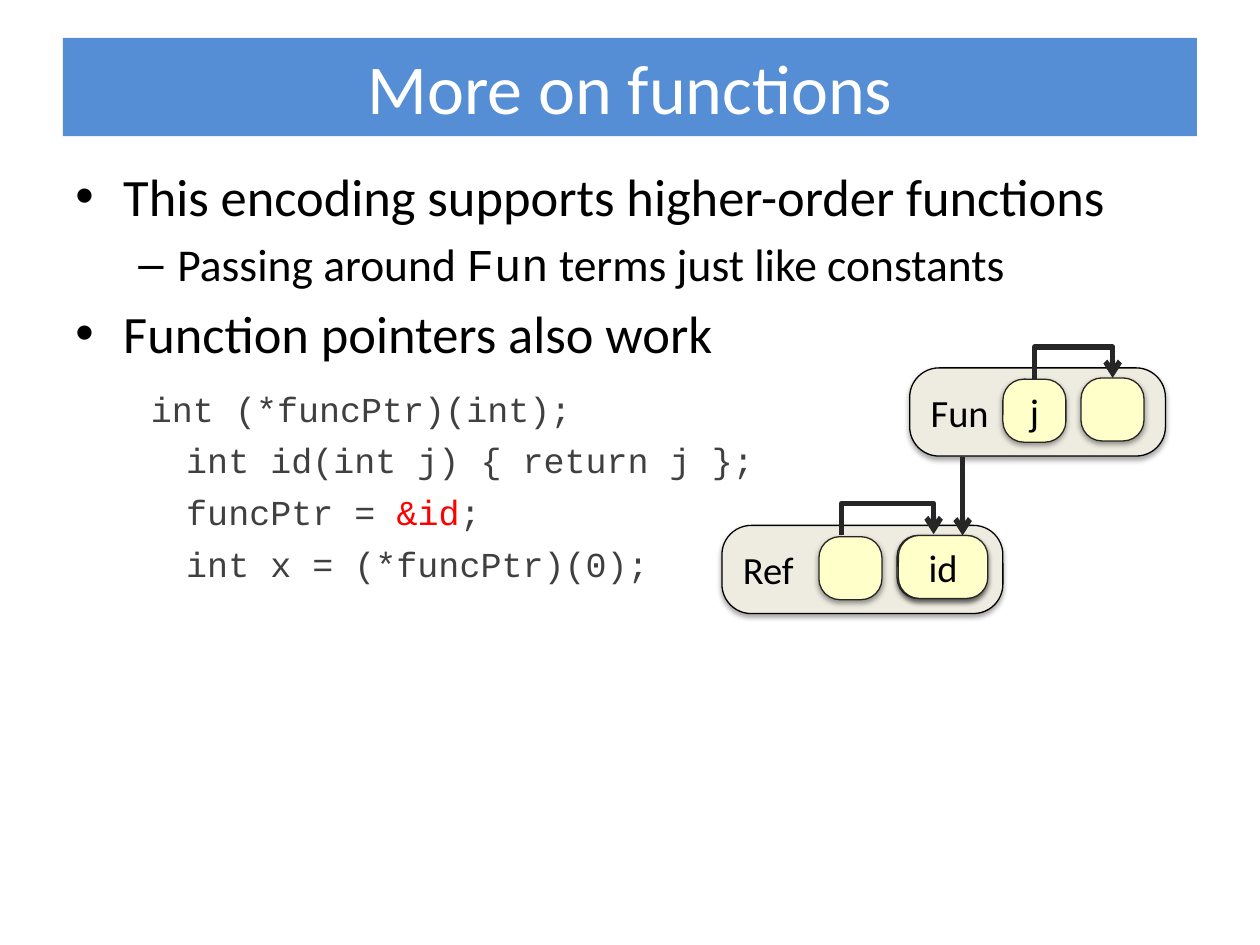
from lxml.etree import SubElement
from pptx import Presentation
from pptx.dml.color import RGBColor
from pptx.enum.shapes import MSO_CONNECTOR as Link, MSO_SHAPE as Preset
from pptx.enum.text import MSO_ANCHOR as Anchor, PP_ALIGN as Align
from pptx.oxml.ns import qn
from pptx.util import Emu, Inches, Pt

THEME = {
    "banner": "558ED5", "white": "FFFFFF", "black": "000000", "code": "404040",
    "alert": "FF0000", "term": "EEECE1", "slot": "FFFFCA", "stroke": "262626",
    "sans": "Calibri", "mono": "Courier New",
    "title": 40, "point": 30, "detail": 26, "listing": 20, "label": 22,
}
LEVELS = {
    "point": {"margin": 0.38, "hang": 0.38, "before": 6, "bullet": "•"},
    "detail": {"margin": 0.81, "hang": 0.31, "before": 5.4, "bullet": "–"},
    "declaration": {"margin": 0.6, "hang": 0, "before": 13, "bullet": None},
    "statement": {"margin": 0.88, "hang": 0, "before": 5.6, "bullet": None},
}
SANS = {
    "point": ("sans", "point", "black"),
    "detail": ("sans", "detail", "black"),
}
MONO_DETAIL = ("mono", "detail", "black")
CODE = ("mono", "listing", "code")
CODE_ALERT = ("mono", "listing", "alert")

TITLE = "More on functions"
BODY = [
    ("point", [("This encoding supports higher-order functions", SANS["point"])]),
    ("detail", [("Passing around ", SANS["detail"]), ("Fun", MONO_DETAIL),
                (" terms just like constants", SANS["detail"])]),
    ("point", [("Function pointers also work", SANS["point"])]),
    ("declaration", [("int (*funcPtr)(int);", CODE)]),
    ("statement", [("int id(int j) { return j };", CODE)]),
    ("statement", [("funcPtr = ", CODE), ("&id", CODE_ALERT), (";", CODE)]),
    ("statement", [("int x = (*funcPtr)(0);", CODE)]),
]
TERMS = [
    {"label": "Fun", "at": (7.22, 2.92), "width": 2.03, "loop": (8.21, 8.83, 3.0),
     "slots": [("j", 7.96, 3.01, 0.5), ("", 8.58, 3.0, 0.5)]},
    {"label": "Ref", "at": (5.73, 4.17), "width": 2.23, "loop": (6.68, 7.41, 4.24),
     "slots": [("", 6.5, 4.26, 0.5), ("id", 7.12, 4.25, 0.71)]},
]
TERM_HEIGHT, SLOT_HEIGHT = 0.7, 0.5
LOOP_DROP, LOOP_RISE = 0.01, 0.26
TERM_LOOK = {"fill": "term", "line": "black", "alpha": 35, "distance": 1.8}
SLOT_LOOK = {"fill": "slot", "line": "stroke", "alpha": 38, "distance": 1.6}
POINTER = ((7.64, 3.63), (7.64, 4.25))
FRONT_SLOT = ("id", 7.13, 4.25, 0.71)


def color(key):
    """Return a theme colour."""
    return RGBColor.from_string(THEME[key])


def write(paragraph, words, style):
    """Add a run in a (font, size, colour) style."""
    face, size, ink = style
    run = paragraph.add_run()
    run.text = words
    for name, value in {"name": THEME[face], "size": Pt(THEME[size])}.items():
        setattr(run.font, name, value)
    run.font.color.rgb = color(ink)


def add_block(slide, preset, box, fill, words, style, align):
    """Add a filled shape with vertically centred text."""
    block = slide.shapes.add_shape(preset, *map(Inches, box))
    block.shadow.inherit = False
    block.fill.solid()
    block.fill.fore_color.rgb = color(fill)
    block.line.fill.background()
    block.text_frame.vertical_anchor = Anchor.MIDDLE
    paragraph = block.text_frame.paragraphs[0]
    paragraph.alignment = align
    if words:
        write(paragraph, words, style)
    return block


def add_rounded(slide, box, words, look, align):
    """Add an outlined rounded box with a soft shadow."""
    block = add_block(slide, Preset.ROUNDED_RECTANGLE, box, look["fill"], words,
                      ("sans", "label", "black"), align)
    block.adjustments[0] = 0.333
    block.line.color.rgb = color(look["line"])
    block.line.width = Pt(0.75)
    effects = block.element.spPr.find(qn("a:effectLst"))
    shadow = SubElement(effects, qn("a:outerShdw"), blurRad=str(Pt(3.1)),
                        dist=str(Pt(look["distance"])), dir="5400000", rotWithShape="0")
    ink = SubElement(shadow, qn("a:srgbClr"), val=THEME["black"])
    SubElement(ink, qn("a:alpha"), val=str(look["alpha"] * 1000))


def add_slot(slide, slot):
    """Add one argument slot of a term."""
    words, left, top, width = slot
    add_rounded(slide, (left, top, width, SLOT_HEIGHT), words, SLOT_LOOK, Align.CENTER)


def add_arrow(slide, kind, start, end):
    """Add a connector with an open arrowhead."""
    arrow = slide.shapes.add_connector(kind, *map(Inches, start + end))
    arrow.line.color.rgb = color("stroke")
    arrow.line.width = Pt(3)
    SubElement(arrow.line._get_or_add_ln(), qn("a:tailEnd"), type="arrow")
    SubElement(arrow.element.spPr, qn("a:effectLst"))
    return arrow


def add_loop(slide, first, last, top):
    """Add a bent arrow rising over two neighbouring slots."""
    middle, center = (first + last) / 2, top + LOOP_DROP / 2
    half, reach = LOOP_DROP / 2, (last - first) / 2
    arrow = add_arrow(slide, Link.ELBOW, (middle + half, center + reach),
                      (middle - half, center - reach))
    properties = arrow.element.spPr
    properties.find(qn("a:xfrm")).set("rot", "5400000")
    geometry = properties.find(qn("a:prstGeom"))
    guides = geometry.find(qn("a:avLst"))
    if guides is None:
        guides = SubElement(geometry, qn("a:avLst"))
    bend = round(LOOP_RISE / LOOP_DROP * 100000)
    SubElement(guides, qn("a:gd"), name="adj1", fmla=f"val {bend}")


def add_body(slide):
    """Add the bullet points and the code listing."""
    frame = slide.shapes.add_textbox(*map(Inches, (0.5, 1.25, 9, 4.08))).text_frame
    frame.word_wrap = True
    for index, (level, runs) in enumerate(BODY):
        paragraph = frame.add_paragraph() if index else frame.paragraphs[0]
        layout = LEVELS[level]
        paragraph.space_before = Pt(layout["before"])
        properties = paragraph._p.get_or_add_pPr()
        indents = {"marL": Inches(layout["margin"]), "indent": Emu(-Inches(layout["hang"]))}
        for name, value in indents.items():
            properties.set(name, str(value))
        if layout["bullet"]:
            SubElement(properties, qn("a:buFont"), typeface="Arial")
            SubElement(properties, qn("a:buChar"), char=layout["bullet"])
        for words, style in runs:
            write(paragraph, words, style)


def main():
    """Build the slide and save it."""
    deck = Presentation()
    deck.slide_width, deck.slide_height = Inches(10), Inches(7.5)
    slide = deck.slides.add_slide(deck.slide_layouts[6])
    add_block(slide, Preset.RECTANGLE, (0.5, 0.3, 9, 0.78), "banner", TITLE,
              ("sans", "title", "white"), Align.CENTER)
    add_body(slide)
    for term in TERMS:
        box = (*term["at"], term["width"], TERM_HEIGHT)
        add_rounded(slide, box, term["label"], TERM_LOOK, Align.LEFT)
        for slot in term["slots"]:
            add_slot(slide, slot)
        add_loop(slide, *term["loop"])
    add_arrow(slide, Link.STRAIGHT, *POINTER)
    add_slot(slide, FRONT_SLOT)
    deck.save("out.pptx")


if __name__ == "__main__":
    main()
